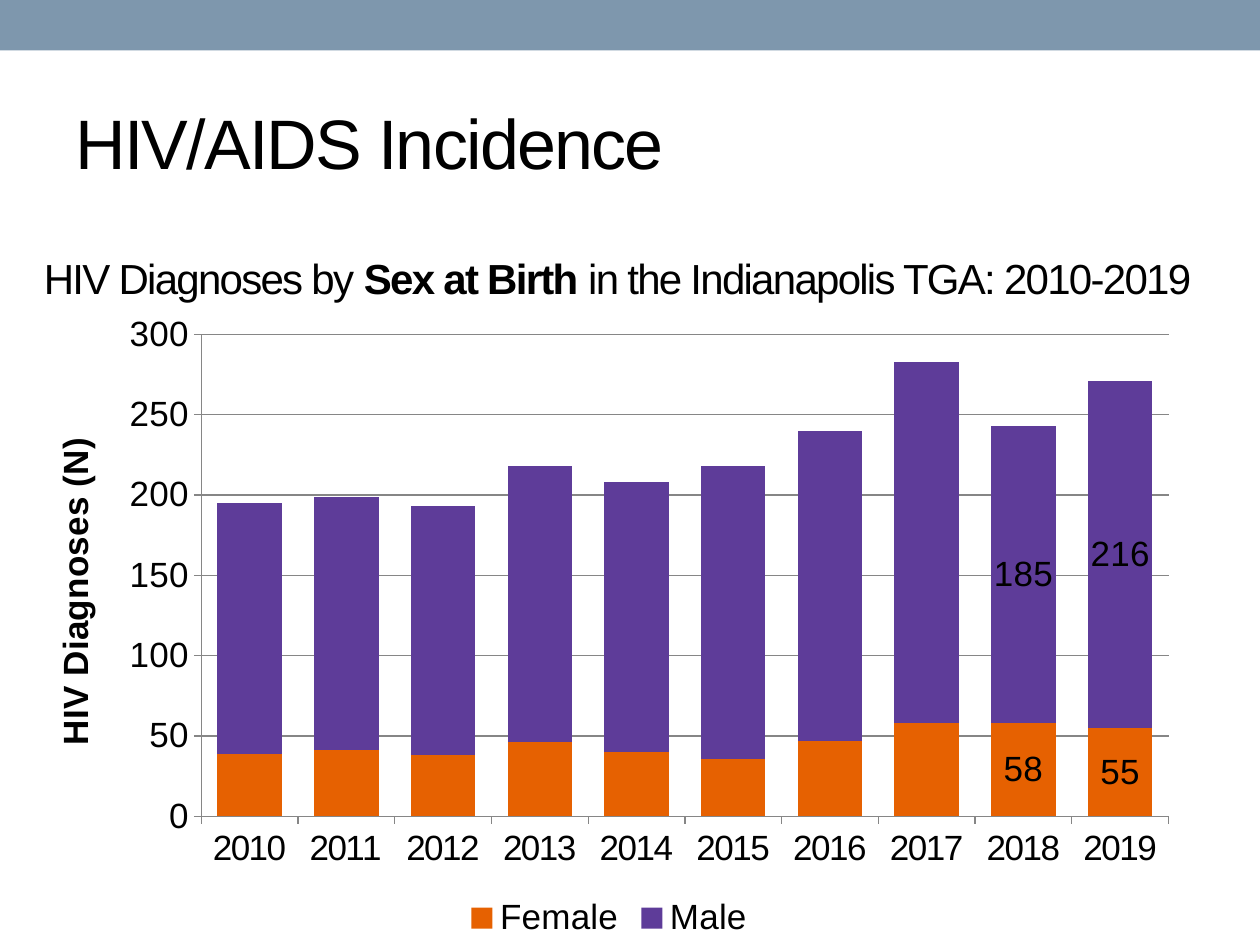
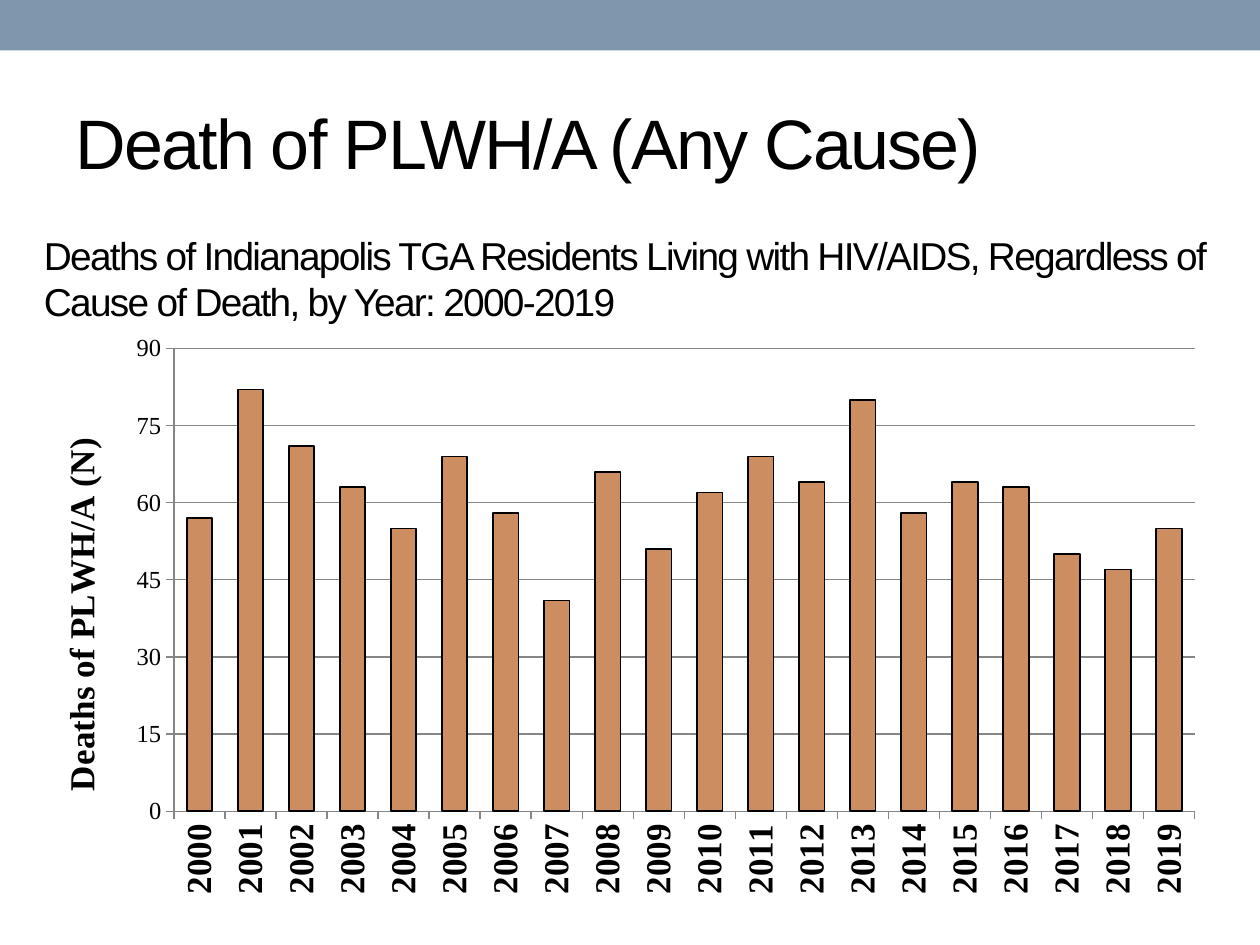
from lxml.etree import SubElement
from pptx import Presentation
from pptx.chart.data import CategoryChartData
from pptx.dml.color import RGBColor
from pptx.enum.chart import XL_CHART_TYPE as ChartType
from pptx.enum.chart import XL_LABEL_POSITION as LabelPosition
from pptx.enum.chart import XL_LEGEND_POSITION as LegendPosition
from pptx.enum.chart import XL_TICK_MARK as TickMark
from pptx.enum.shapes import MSO_SHAPE as Shape
from pptx.enum.text import MSO_ANCHOR as Anchor
from pptx.oxml.ns import qn
from pptx.util import Pt

# Shared look
BAND = RGBColor(0x7E, 0x97, 0xAD)
BLACK = RGBColor(0, 0, 0)
GRID = RGBColor(0x86, 0x86, 0x86)
ORANGE = RGBColor(0xE6, 0x61, 0x01)
PURPLE = RGBColor(0x5E, 0x3C, 0x99)
TAN = RGBColor(0xCC, 0x8E, 0x60)
SANS, SERIF = "Arial", "Times New Roman"
WIDTH, HEIGHT = 720, 540

# Boxes: left, top, width, height in points
BAND_BOX = (0, 0, WIDTH, 28.8)
TITLE_BOX = (36, 41.76, 648, 77.76)
SUBTITLE_BOX = (18, 131.76, 678.24, 54)


def points(box):
    return [Pt(length) for length in box]


def style_font(font, size, name=SANS, bold=False):
    font.size, font.name, font.bold = Pt(size), name, bold
    font.color.rgb = BLACK


def add_text(page, box, parts, size, spacing=-1):
    """Write (text, bold) parts as one vertically centred paragraph."""
    frame = page.shapes.add_textbox(*points(box)).text_frame
    frame.word_wrap = True
    frame.vertical_anchor = Anchor.MIDDLE
    para = frame.paragraphs[0]
    for text, bold in parts:
        span = para.add_run()
        span.text = text
        style_font(span.font, size, bold=bold)
        span._r.get_or_add_rPr().set("spc", str(spacing * 100))


def add_page(deck, title, subtitle, subtitle_size):
    page = deck.slides.add_slide(deck.slide_layouts[6])
    band = page.shapes.add_shape(Shape.RECTANGLE, *points(BAND_BOX))
    band.shadow.inherit = False
    band.fill.solid()
    band.fill.fore_color.rgb = BAND
    band.line.fill.background()
    add_text(page, TITLE_BOX, [(title, False)], 40)
    add_text(page, SUBTITLE_BOX, subtitle, subtitle_size)
    return page


def place_plot(chart, area):
    """Fix the inner plot area as fractions of the chart box."""
    plot_area = chart.element.find(".//" + qn("c:plotArea"))
    for old in plot_area.findall(qn("c:layout")):
        plot_area.remove(old)
    layout = SubElement(plot_area, qn("c:layout"))
    plot_area.insert(0, layout)
    manual = SubElement(layout, qn("c:manualLayout"))
    settings = [("layoutTarget", "inner"), ("xMode", "edge"), ("yMode", "edge")]
    for tag, value in settings + list(zip("xywh", area)):
        SubElement(manual, qn("c:" + tag)).set("val", str(value))


def style_axis(axis, size, font, bold=False):
    axis.major_tick_mark = TickMark.OUTSIDE
    axis.minor_tick_mark = TickMark.NONE
    axis.format.line.color.rgb = GRID
    style_font(axis.tick_labels.font, size, font, bold)


def add_columns(page, box, area, years, series, axis_title, top, step,
                font=SANS, size=20, year_bold=False, gap=50):
    """Add stacked columns; series holds (name, values, colour)."""
    data = CategoryChartData()
    data.categories = [str(year) for year in years]
    for name, values, _ in series:
        data.add_series(name, values)
    chart = page.shapes.add_chart(
        ChartType.COLUMN_STACKED, *points(box), data).chart
    style_font(chart.font, size, font)
    chart.has_title = False
    chart.has_legend = False
    place_plot(chart, area)

    # Axes
    style_axis(chart.category_axis, 20, font, year_bold)
    values_axis = chart.value_axis
    style_axis(values_axis, size, font)
    values_axis.minimum_scale, values_axis.maximum_scale = 0, top
    values_axis.major_unit = step
    values_axis.major_gridlines.format.line.color.rgb = GRID
    frame = values_axis.axis_title.text_frame
    frame.text = axis_title
    style_font(frame.paragraphs[0].runs[0].font, 20, font, True)

    # Columns
    plot = chart.plots[0]
    plot.gap_width, plot.overlap = gap, 100
    plot.vary_by_categories = False
    for column, (_, _, colour) in zip(plot.series, series):
        column.format.fill.solid()
        column.format.fill.fore_color.rgb = colour
    return chart


def label_points(chart, indexes):
    for column in chart.plots[0].series:
        column.data_labels.show_value = False
        for index in indexes:
            label = column.points[index].data_label
            style_font(label.font, 20)
            label.position = LabelPosition.CENTER


def add_incidence(deck):
    subtitle = [("HIV Diagnoses by ", False), ("Sex at Birth ", True),
                ("in the Indianapolis TGA: 2010-2019", False)]
    page = add_page(deck, "HIV/AIDS Incidence", subtitle, 24)
    series = [
        ("Female", (39, 41, 38, 46, 40, 36, 47, 58, 58, 55), ORANGE),
        ("Male", (156, 158, 155, 172, 168, 182, 193, 225, 185, 216), PURPLE),
    ]
    chart = add_columns(page, (15.12, 172.8, 666, 367.2),
                        (0.15, 0.05, 0.83, 0.75), range(2010, 2020), series,
                        "HIV Diagnoses (N)", top=300, step=50)
    label_points(chart, (8, 9))
    # Tighter year labels
    for props in chart.element.xpath(".//c:catAx/c:txPr//a:defRPr"):
        props.set("spc", "-100")
    chart.has_legend = True
    chart.legend.position = LegendPosition.BOTTOM
    chart.legend.include_in_layout = False
    style_font(chart.legend.font, 20)


def add_deaths(deck):
    subtitle = "Deaths of Indianapolis TGA Residents Living with HIV/AIDS, " \
        "Regardless of Cause of Death, by Year: 2000-2019"
    page = add_page(deck, "Death of PLWH/A (Any Cause)",
                    [(subtitle, False)], 22.2)
    deaths = (57, 82, 71, 63, 55, 69, 58, 41, 66, 51,
              62, 69, 64, 80, 58, 64, 63, 50, 47, 55)
    chart = add_columns(page, (18, 185.76, 678.24, 334.8),
                        (0.12, 0.04, 0.86, 0.79), range(2000, 2020),
                        [("Series 1", deaths, TAN)], "Deaths of PLWH/A (N)",
                        top=90, step=15, font=SERIF, size=14,
                        year_bold=True, gap=100)
    chart.value_axis.tick_labels.number_format = "#,##0"
    chart.value_axis.tick_labels.number_format_is_linked = False
    outline = chart.plots[0].series[0].format.line
    outline.color.rgb = BLACK
    outline.width = Pt(1)
    # Upright year labels
    for body in chart.element.xpath(".//c:catAx/c:txPr/a:bodyPr"):
        body.set("rot", "-5400000")
        body.set("vert", "horz")


def main():
    deck = Presentation()
    deck.slide_width, deck.slide_height = Pt(WIDTH), Pt(HEIGHT)
    add_incidence(deck)
    add_deaths(deck)
    deck.save("out.pptx")


if __name__ == "__main__":
    main()
